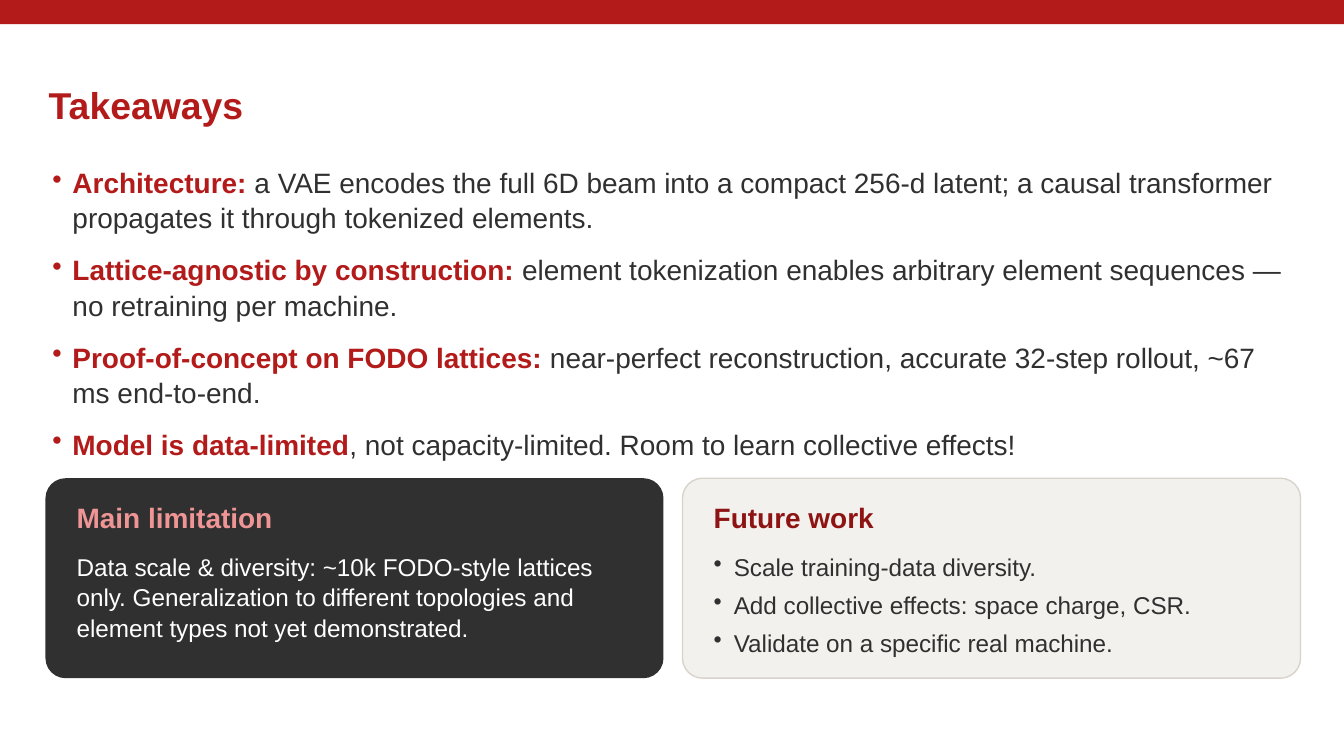
from lxml import etree
from pptx import Presentation
from pptx.dml.color import RGBColor
from pptx.enum.shapes import MSO_SHAPE as SHAPE
from pptx.enum.text import MSO_ANCHOR as ANCHOR, MSO_AUTO_SIZE as AUTO, PP_ALIGN as ALIGN
from pptx.oxml.ns import qn
from pptx.util import Cm, Pt

RED = RGBColor(0xB3, 0x1B, 0x1B)
DARK_RED = RGBColor(0x8E, 0x14, 0x14)
PINK = RGBColor(0xEF, 0x95, 0x95)
INK = RGBColor(0x30, 0x30, 0x30)
PAPER = RGBColor(0xF3, 0xF1, 0xED)
EDGE = RGBColor(0xD8, 0xD3, 0xCB)
WHITE = RGBColor(0xFF, 0xFF, 0xFF)


def add_text(p, text, size=13, color=INK, bold=False, bullet=False, spacing=None, before=None):
    """Append a run to paragraph p and set the paragraph format."""
    if bullet:
        pPr = p._p.get_or_add_pPr()
        pPr.set("marL", str(Cm(0.38)))
        pPr.set("indent", str(-Cm(0.38)))
        etree.SubElement(pPr, qn("a:buChar")).set("char", "•")
    if spacing:
        p.line_spacing = spacing
    if before:
        p.space_before = Pt(before)
    r = p.add_run()
    r.text = text
    r.font.name = "Arial"
    r.font.size = Pt(size)
    r.font.bold = bold
    r.font.color.rgb = color


def add_box(s, left, top, width, height):
    """Add a wrapping text box with narrow margins and return its frame."""
    tf = s.shapes.add_textbox(Cm(left), Cm(top), Cm(width), Cm(height)).text_frame
    tf.word_wrap = True
    tf.margin_left = tf.margin_right = tf.margin_top = tf.margin_bottom = Cm(0.05)
    return tf


prs = Presentation()
prs.slide_width, prs.slide_height = Cm(25.4), Cm(14.29)
s = prs.slides.add_slide(prs.slide_layouts[5])

# Top bar
bar = s.shapes.add_shape(SHAPE.RECTANGLE, 0, 0, prs.slide_width, Cm(0.46))
bar.shadow.inherit = False
bar.fill.solid()
bar.fill.fore_color.rgb = RED
bar.line.fill.background()

# Title
title = s.shapes.title
title.left, title.top, title.width, title.height = Cm(0.79), Cm(1.27), Cm(24.1), Cm(1.42)
tf = title.text_frame
tf.auto_size = AUTO.NONE
tf.vertical_anchor = ANCHOR.MIDDLE
tf.margin_left = tf.margin_right = tf.margin_top = tf.margin_bottom = Cm(0.13)
p = tf.paragraphs[0]
p.alignment = ALIGN.LEFT
add_text(p, "Takeaways", size=20, color=RED, bold=True)

# Main bullets
takeaways = [
    ("Architecture: ", "a VAE encodes the full 6D beam into a compact 256-d latent; "
     "a causal transformer propagates it through tokenized elements."),
    ("Lattice-agnostic by construction: ", "element tokenization enables arbitrary "
     "element sequences — no retraining per machine."),
    ("Proof-of-concept on FODO lattices: ", "near-perfect reconstruction, accurate "
     "32-step rollout, ~67 ms end-to-end."),
    ("Model is data-limited", ", not capacity-limited. Room to learn collective effects!"),
]
tf = add_box(s, 0.94, 3.05, 23.57, 5.41)
for i, (lead, rest) in enumerate(takeaways):
    p = tf.add_paragraph() if i else tf.paragraphs[0]
    add_text(p, lead, size=15, color=RED, bold=True, bullet=True,
             spacing=1.05, before=9 if i else None)
    add_text(p, rest, size=15)

# Two cards: heading, heading colour, fill, edge, text colour, bullets, lines
cards = [
    ("Main limitation", PINK, INK, None, WHITE, False,
     ["Data scale & diversity: ~10k FODO-style lattices only. Generalization to "
      "different topologies and element types not yet demonstrated."]),
    ("Future work", DARK_RED, PAPER, EDGE, INK, True,
     ["Scale training-data diversity.",
      "Add collective effects: space charge, CSR.",
      "Validate on a specific real machine."]),
]
for n, (heading, heading_color, fill, edge, color, bullet, lines) in enumerate(cards):
    left = 0.86 + n * 12.04
    card = s.shapes.add_shape(SHAPE.ROUNDED_RECTANGLE, Cm(left), Cm(9.04), Cm(11.68), Cm(3.78))
    card.adjustments[0] = 0.1
    card.shadow.inherit = False
    card.fill.solid()
    card.fill.fore_color.rgb = fill
    if edge:
        card.line.color.rgb = edge
        card.line.width = Pt(0.75)
    else:
        card.line.fill.background()

    tf = add_box(s, left + 0.54, 9.42, 10.77, 0.69)
    add_text(tf.paragraphs[0], heading, size=15, color=heading_color, bold=True)

    tf = add_box(s, left + 0.54, 10.36, 10.77, 2)
    for i, line in enumerate(lines):
        p = tf.add_paragraph() if i else tf.paragraphs[0]
        add_text(p, line, color=color, bullet=bullet, spacing=1.05, before=4 if i else None)

prs.save("out.pptx")
